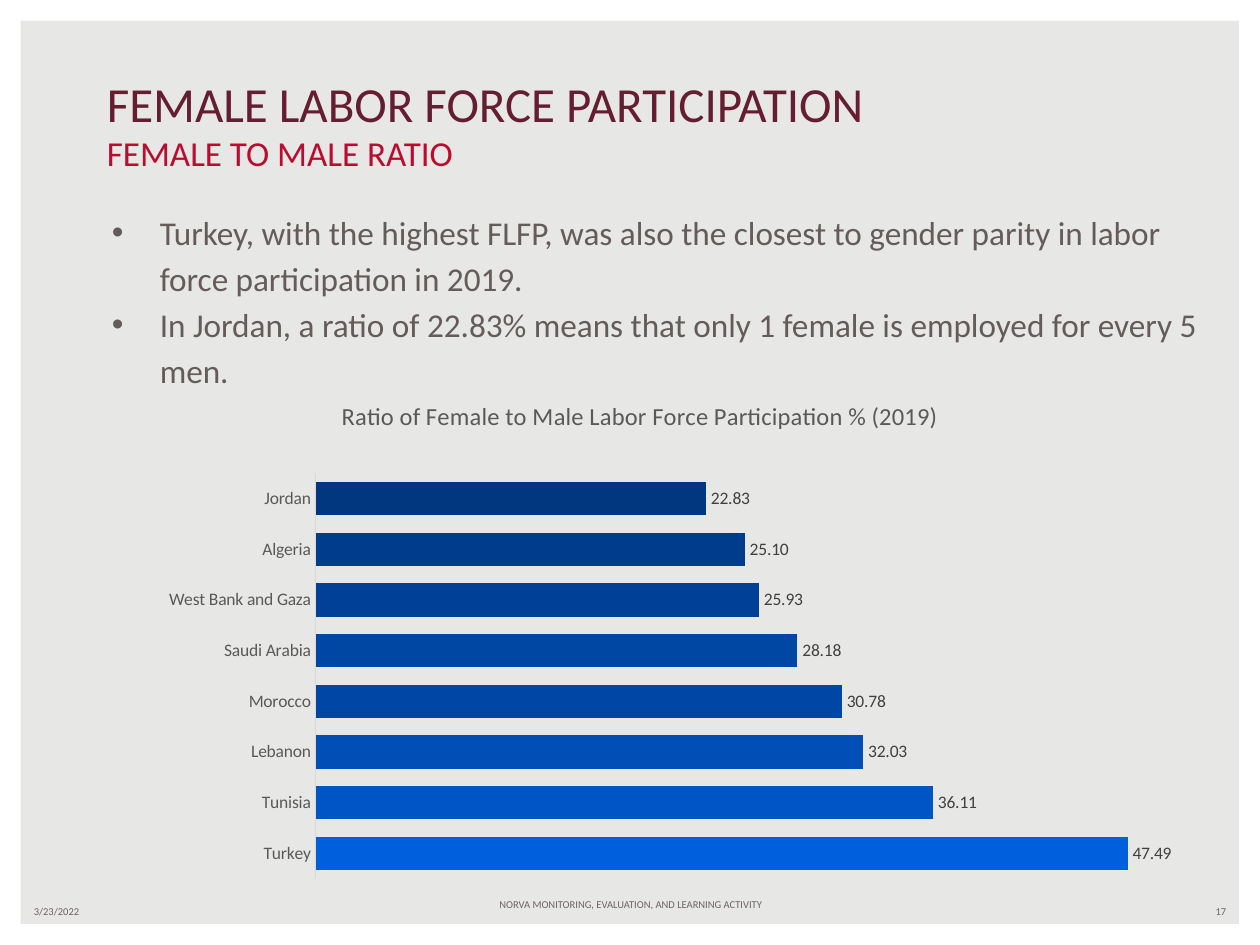
from pptx import Presentation
from pptx.chart.data import CategoryChartData as ChartData
from pptx.dml.color import RGBColor as Color
from pptx.enum.chart import XL_CHART_TYPE as Kind, XL_LABEL_POSITION as Spot
from pptx.enum.chart import XL_TICK_MARK as Tick
from pptx.enum.shapes import MSO_SHAPE as Shape
from pptx.enum.text import MSO_ANCHOR as Anchor, PP_ALIGN as Align
from pptx.oxml import parse_xml
from pptx.oxml.ns import nsdecls, qn
from pptx.util import Inches, Pt
from lxml.etree import SubElement

WIDE, HIGH = Inches(10), Inches(7.5)
COLS, ROWS = 100, 75
FONT = "Calibri"
HUES = {
    "back": "E7E7E5", "frame": "FFFFFF", "foot": "6C6463",
    "title": "651D32", "sub": "BA0C2F", "body": "635C5B",
    "axis": "595959", "line": "D9D9D9", "label": "404040",
}
RATIOS = [
    ("Turkey", 47.49, "005FDD"),
    ("Tunisia", 36.11, "0055C6"),
    ("Lebanon", 32.03, "004EB6"),
    ("Morocco", 30.78, "0047A5"),
    ("Saudi Arabia", 28.18, "0046A3"),
    ("West Bank and Gaza", 25.93, "004096"),
    ("Algeria", 25.10, "003C8C"),
    ("Jordan", 22.83, "00377F"),
]
POINTS = [
    "Turkey, with the highest FLFP, was also the closest to gender parity in labor force participation in 2019.",
    "In Jordan, a ratio of 22.83% means that only 1 female is employed for every 5 men.",
]


def hue(name):
    return Color.from_string(HUES[name])


def place(col, row, cols, rows):
    return (int(WIDE * col / COLS), int(HIGH * row / ROWS),
            int(WIDE * cols / COLS), int(HIGH * rows / ROWS))


def style(font, size, name):
    font.name, font.size, font.bold = FONT, Pt(size), False
    font.color.rgb = hue(name)


def add_frame(slide):
    frame = slide.shapes.add_shape(Shape.FRAME, *place(0, 0, COLS, ROWS))
    frame.adjustments[0] = 0.022
    frame.shadow.inherit = False
    frame.fill.solid()
    frame.fill.fore_color.rgb = hue("frame")
    frame.line.fill.background()


def add_text(slide, spot, text, size, name, anchor=Anchor.MIDDLE, align=Align.LEFT):
    frame = slide.shapes.add_textbox(*place(*spot)).text_frame
    frame.word_wrap = True
    frame.vertical_anchor = anchor
    frame.text = text
    for par in frame.paragraphs:
        par.alignment = align
        for run in par.runs:
            style(run.font, size, name)
    return frame


def add_title(slide):
    text = "FEMALE LABOR FORCE PARTICIPATION\vFEMALE TO MALE RATIO"
    frame = add_text(slide, (7.5, 5.2, 85, 9.1), text, 28, "title", Anchor.BOTTOM)
    style(frame.paragraphs[0].runs[1].font, 20, "sub")


def add_bullets(slide):
    frame = add_text(slide, (6.7, 15.4, 90.6, 19.9), "\n".join(POINTS), 19, "body", Anchor.TOP)
    frame.margin_top = frame.margin_bottom = Inches(0.1)
    for par in frame.paragraphs:
        par.line_spacing = 1.15
        props = par._p.get_or_add_pPr()
        props.set("marL", str(Inches(0.5)))
        props.set("indent", str(-Inches(0.38)))
        tint = SubElement(props, qn("a:buClr"))
        SubElement(tint, qn("a:srgbClr"), val=HUES["body"])
        SubElement(props, qn("a:buFont"), typeface="Arial")
        SubElement(props, qn("a:buChar"), char="•")


def layout(**parts):
    tags = "".join(f'<c:{tag} val="{val}"/>' for tag, val in parts.items())
    return parse_xml(f'<c:layout {nsdecls("c")}><c:manualLayout>{tags}</c:manualLayout></c:layout>')


def set_layout(node, new, prior=None):
    for old in node.findall(qn("c:layout")):
        node.remove(old)
    if prior is None:
        node.insert(0, new)
    else:
        node.find(qn(prior)).addnext(new)


def set_title(chart):
    chart.has_title = True
    frame = chart.chart_title.text_frame
    frame.text = "Ratio of Female to Male Labor Force Participation % (2019)"
    style(frame.paragraphs[0].runs[0].font, 14, "axis")
    chart.chart_title.include_in_layout = False
    spot = layout(xMode="edge", yMode="edge", x=0.2, y=0.02)
    set_layout(chart.chart_title._element, spot, "c:tx")


def set_axes(chart):
    cats, vals = chart.category_axis, chart.value_axis
    cats.major_tick_mark = cats.minor_tick_mark = Tick.NONE
    cats.has_major_gridlines = vals.has_major_gridlines = False
    style(cats.tick_labels.font, 10, "axis")
    cats.format.line.color.rgb = hue("line")
    cats.format.line.width = Pt(0.75)
    vals.minimum_scale, vals.maximum_scale = 0, 50
    vals.visible = False


def set_bars(plot):
    plot.gap_width = 52
    plot.vary_by_categories = False
    bars = plot.series[0]
    bars.invert_if_negative = False
    for fill, (_, _, tint) in [(bars.format.fill, RATIOS[-1])] + [
            (bars.points[n].format.fill, row) for n, row in enumerate(RATIOS)]:
        fill.solid()
        fill.fore_color.rgb = Color.from_string(tint)
    labels = bars.data_labels
    labels.show_value = True
    labels.number_format, labels.number_format_is_linked = "0.00", False
    labels.position = Spot.OUTSIDE_END
    style(labels.font, 10, "label")


def add_bars(slide):
    data = ChartData()
    data.categories = [name for name, _, _ in RATIOS]
    data.add_series("Series 1", [val for _, val, _ in RATIOS])
    spot = place(9.8, 30.5, 84.8, 39.3)
    chart = slide.shapes.add_chart(Kind.BAR_CLUSTERED, *spot, data).chart
    chart.font.name, chart.font.size = "Arial", Pt(10)
    chart.has_legend = False
    set_title(chart)
    set_axes(chart)
    set_bars(chart.plots[0])
    area = layout(layoutTarget="inner", xMode="edge", yMode="edge",
                  x=0.18, y=0.18, w=0.8, h=0.82)
    set_layout(chart._chartSpace.chart.plotArea, area)


def add_foot(slide):
    add_text(slide, (34.2, 70.8, 31.7, 3), "NORVA MONITORING, EVALUATION, AND LEARNING ACTIVITY",
             6, "foot", Anchor.TOP, Align.CENTER)
    for col, text, align in [(1.7, "3/23/2022", Align.LEFT), (75, "17", Align.RIGHT)]:
        add_text(slide, (col, 71.3, 23.3, 2), text, 6, "foot", align=align)


def main():
    deck = Presentation()
    deck.slide_width, deck.slide_height = WIDE, HIGH
    slide = deck.slides.add_slide(deck.slide_layouts[6])
    slide.background.fill.solid()
    slide.background.fill.fore_color.rgb = hue("back")
    add_frame(slide)
    add_foot(slide)
    add_title(slide)
    add_bullets(slide)
    add_bars(slide)
    deck.save("out.pptx")


if __name__ == "__main__":
    main()
